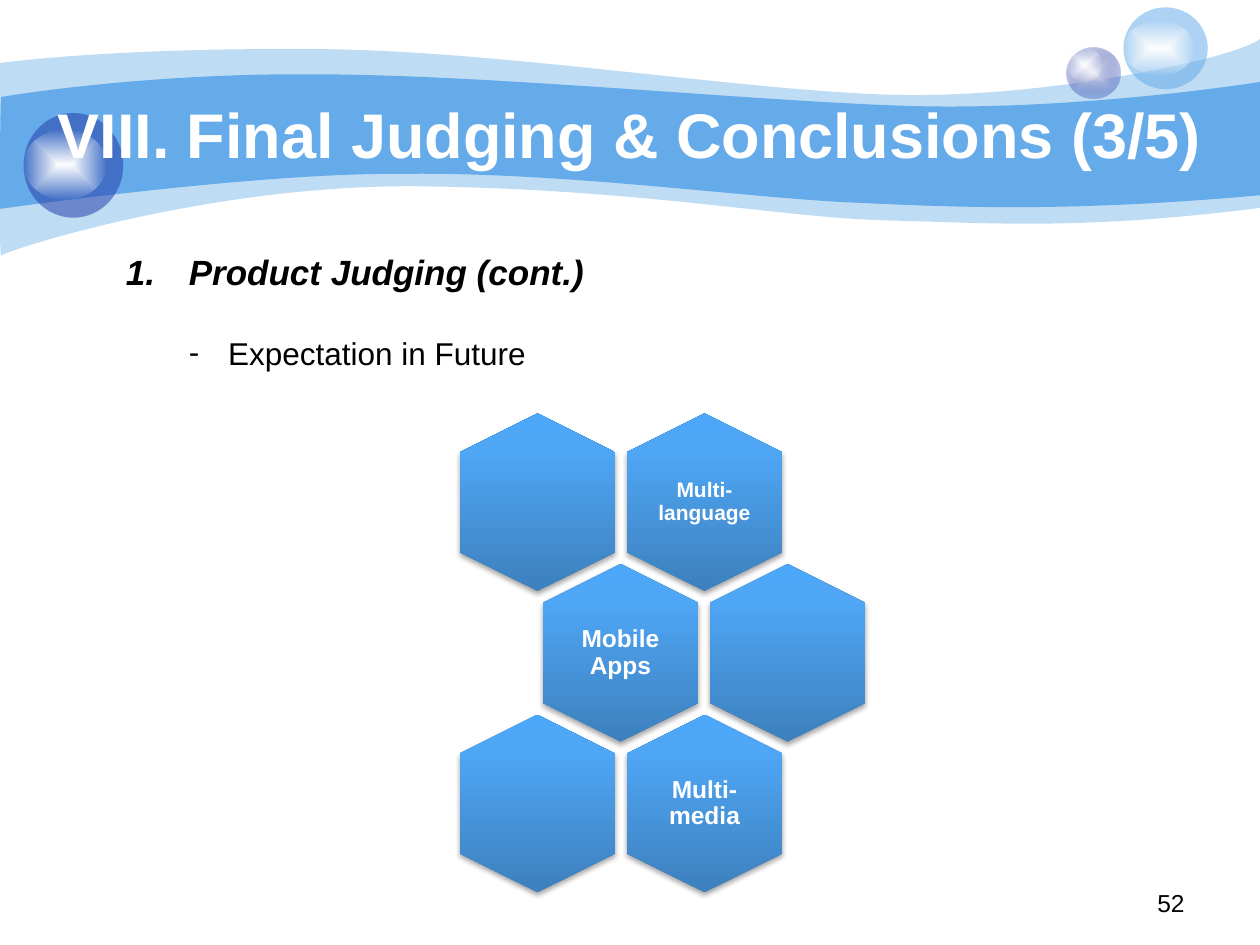
"""Build the slide on final judging and conclusions."""
from lxml import etree
from pptx import Presentation
from pptx.dml.color import RGBColor
from pptx.enum.shapes import MSO_SHAPE as Kind
from pptx.enum.text import MSO_ANCHOR as Anchor, PP_ALIGN as Align
from pptx.oxml import parse_xml
from pptx.oxml.ns import nsdecls, qn
from pptx.util import Pt

WHITE, BLACK, SKY, NAVY = "FFFFFF", "000000", "65AAE9", "233DA9"
GLOW = [(0, WHITE, 100), (100, WHITE, 0)]
STEEL = [(0, "3D80BD", 100), (80, "4FA6F5", 100), (100, "4CA7F9", 100)]
ROUND = '<a:path path="shape"><a:fillToRect l="50000" t="50000" r="50000" b="50000"/></a:path>'
UP = '<a:lin ang="16200000" scaled="0"/>'


def paint(shape, stops, way=ROUND):
    """Fill a shape with one clear colour or a gradient, with no line or shadow."""
    tints = [f'<a:srgbClr val="{tint}"><a:alpha val="{clear * 1000}"/></a:srgbClr>' for _, tint, clear in stops]
    if len(stops) == 1:
        xml = f'<a:solidFill {nsdecls("a")}>{tints[0]}</a:solidFill>'
    else:
        marks = "".join(f'<a:gs pos="{stop[0] * 1000}">{tint}</a:gs>' for stop, tint in zip(stops, tints))
        xml = f'<a:gradFill {nsdecls("a")} rotWithShape="0"><a:gsLst>{marks}</a:gsLst>{way}</a:gradFill>'
    shape.fill.background()
    props = shape.element.spPr
    props.replace(props.find(qn("a:noFill")), parse_xml(xml))
    shape.line.fill.background()
    shape.shadow.inherit = False


def write(box, text, size, tint=BLACK, bold=False, align=Align.LEFT, pad=None, mid=False):
    """Add a text box with one paragraph and return its frame."""
    frame = slide.shapes.add_textbox(*map(Pt, box)).text_frame
    frame.word_wrap = True
    if mid:
        frame.vertical_anchor = Anchor.MIDDLE
    if pad:
        frame.margin_left = frame.margin_right = frame.margin_top = frame.margin_bottom = Pt(pad)
    para = frame.paragraphs[0]
    para.text, para.alignment = text, align
    para.font.name, para.font.size, para.font.bold = "Arial", Pt(size), bold
    para.font.color.rgb = RGBColor.from_string(tint)
    return frame


deck = Presentation()
deck.slide_width, deck.slide_height = Pt(720), Pt(540)
slide = deck.slides.add_slide(deck.slide_layouts[6])

waves = [
    (41, (0, 36), [
        [(17.3, 33.8), (77, 27.4), (177.8, 28.1)],
        [(277.9, 28.1), (414, 50.4), (503.3, 54)],
        [(591.8, 57.6), (705.6, 33.8), (720, 22.3)],
        [(720, 118.8)],
        [(617.8, 131.8), (566.6, 127.4), (507.6, 126)],
        [(447.8, 124.6), (370.8, 108.7), (247, 106.6)],
        [(123.8, 103.7), (2.9, 143.3), (0.7, 146.2)],
        [(-0.7, 149.8), (0, 54), (0, 36)]]),
    (100, (0.7, 55.4), [
        [(1.4, 55.4), (79.2, 41.8), (178.6, 42.5)],
        [(277.9, 42.5), (428.4, 57.6), (517, 60.5)],
        [(605.5, 63.4), (702.7, 49.7), (720, 46.8)],
        [(720, 111.6)],
        [(614.2, 121), (550.8, 118.8), (491, 115.9)],
        [(431.3, 113.8), (321.8, 97.9), (228.2, 99.4)],
        [(146.2, 98.6), (-1.4, 119.5), (-0.7, 119.5)],
        [(0, 119.5), (0, 55.4), (0.7, 55.4)]]),
]
for clear, start, parts in waves:
    build = slide.shapes.build_freeform(*map(Pt, start))
    build.add_line_segments([(Pt(x), Pt(y)) for part in parts for x, y in part])
    wave = build.convert_to_shape()
    lines = wave.element.findall(".//" + qn("a:lnTo"))
    for part in parts:
        group, lines = lines[:len(part)], lines[len(part):]
        if len(part) == 3:
            curve = etree.Element(qn("a:cubicBezTo"))
            group[0].addprevious(curve)
            for line in group:
                curve.append(line[0])
                line.getparent().remove(line)
    paint(wave, [(0, SKY, clear)])

balls = [
    ((609.8, 27.4, 30.2, 28.8), [(0, "E1E2ED", 100), (100, NAVY, 31)]),
    ((609.8, 27.4, 20.2, 19.4), GLOW),
    ((642, 4.2, 48.2, 46.8), [(0, SKY, 53)]),
    ((642, 12.1, 40.3, 31), GLOW),
    ((13.5, 64.6, 56.9, 59.8), [(0, NAVY, 53)]),
    ((13.5, 74, 47.5, 40.3), GLOW),
]
for box, stops in balls:
    paint(slide.shapes.add_shape(Kind.OVAL, *map(Pt, box)), stops)

write((0, 54, 720, 44.6), "VIII. Final Judging & Conclusions (3/5)", 36, WHITE, True, Align.CENTER, mid=True)

frame = write((64.8, 139.7, 666, 77.8), "Product Judging (cont.)", 20, bold=True)
head, item = frame.paragraphs[0], frame.add_paragraph()
head.font.italic = True
item.text, item.level, item.space_before = "Expectation in Future", 1, Pt(23.5)
for para, left, hang, tag, key, mark in (
        (head, 36, 36, "a:buAutoNum", "type", "arabicPeriod"),
        (item, 58.5, 22.5, "a:buChar", "char", "-")):
    props = para._p.get_or_add_pPr()
    props.set("marL", str(Pt(left)))
    props.set("indent", str(-Pt(hang)))
    face, bullet = etree.Element(qn("a:buFont")), etree.Element(qn(tag))
    face.set("typeface", "Arial")
    bullet.set(key, mark)
    old = props.find(qn("a:defRPr"))
    for part in (face, bullet):
        if old is None:
            props.append(part)
        else:
            old.addprevious(part)
item.font.name, item.font.size = "Arial", Pt(18)
item.font.color.rgb = RGBColor.from_string(BLACK)

wide, high = 101.5, 88.5
cells = [
    (0, 1, "Multi- language", 12), (0, 0, "", 0),
    (1, 0, "Mobile Apps", 14), (1, 1, "", 0),
    (2, 1, "Multi- media", 14), (2, 0, "", 0),
]
for row, col, text, size in cells:
    x = 307.1 + 95.5 * col + 47.5 * (row % 2)
    y = 287 + 86.1 * row
    hexa = slide.shapes.add_shape(Kind.HEXAGON, Pt(x - wide / 2), Pt(y - high / 2), Pt(wide), Pt(high))
    hexa.rotation = 90
    hexa.adjustments[0] = 0.25
    paint(hexa, STEEL, UP)
    hexa.element.spPr.find(qn("a:effectLst")).append(parse_xml(
        f'<a:outerShdw {nsdecls("a")} blurRad="{Pt(3.1)}" dist="{Pt(1.8)}" dir="5400000" rotWithShape="0">'
        f'<a:srgbClr val="{BLACK}"><a:alpha val="35000"/></a:srgbClr></a:outerShdw>'))
    if text:
        label = write((x - 30.25, y - 35, 60.5, 70), text, size, WHITE, True, Align.CENTER, size * 0.3, True)
        label.paragraphs[0].line_spacing = 0.9

write((516.2, 504, 167.8, 25.2), "52", 14, align=Align.RIGHT)
deck.save("out.pptx")
